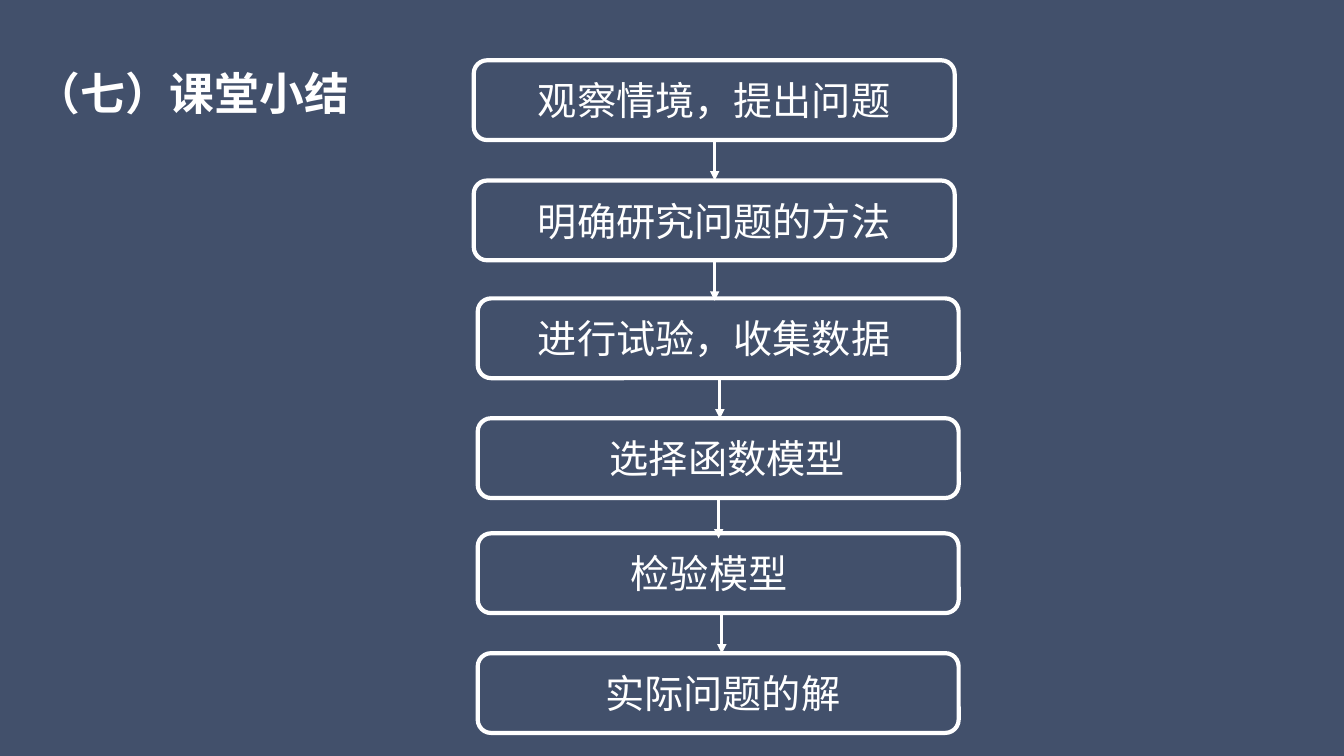
from lxml.etree import SubElement
from pptx import Presentation
from pptx.dml.color import RGBColor
from pptx.enum.shapes import MSO_CONNECTOR, MSO_SHAPE
from pptx.enum.text import MSO_ANCHOR, MSO_AUTO_SIZE, PP_ALIGN
from pptx.oxml.ns import qn
from pptx.util import Cm, Pt

WIDE, HIGH = 12.12, 2.01  # step box, cm
DROP = 1.02  # arrow length, cm

# Text, box left, box top, text indent, arrow x (cm)
STEPS = [
    ("观察情境，提出问题", 11.94, 1.52, 1.52, 18.01),
    ("明确研究问题的方法", 11.94, 4.55, 1.52, 18.01),
    ("进行试验，收集数据", 12.04, 7.52, 1.42, 18.14),
    ("选择函数模型", 12.04, 10.54, 3.23, 18.11),
    ("检验模型", 12.04, 13.44, 3.76, 18.19),
    ("实际问题的解", 12.04, 16.46, 3.12, None),
]


def color(code):
    return RGBColor.from_string(code)


class Board:
    ink, back = "FFFFFF", "42506B"
    font, serif = "Noto Sans CJK SC", "Times New Roman"

    def __init__(self, slide):
        self.slide = slide
        fill = slide.background.fill
        fill.solid()
        fill.fore_color.rgb = color(self.back)

    def label(self, frame, text, size, latin, bold=False):
        frame.text = text
        frame.word_wrap = True
        frame.auto_size = MSO_AUTO_SIZE.NONE
        frame.vertical_anchor = MSO_ANCHOR.MIDDLE
        line = frame.paragraphs[0]
        line.alignment = PP_ALIGN.LEFT
        line.line_spacing = 1.0
        font = line.runs[0].font
        font.size, font.bold, font.name = Pt(size), bold, latin
        font.color.rgb = color(self.ink)
        east = SubElement(line.runs[0]._r.get_or_add_rPr(), qn("a:ea"))
        east.set("typeface", self.font)

    def title(self, text, left, top, width, height):
        head = self.slide.shapes.title
        head.left, head.top = Cm(left), Cm(top)
        head.width, head.height = Cm(width), Cm(height)
        self.label(head.text_frame, text, 32, self.serif, True)

    def box(self, text, left, top, inset):
        box = self.slide.shapes.add_shape(
            MSO_SHAPE.ROUNDED_RECTANGLE, Cm(left), Cm(top), Cm(WIDE), Cm(HIGH))
        box.shadow.inherit = False
        box.fill.background()
        box.line.color.rgb = color(self.ink)
        box.line.width = Pt(3)
        box.text_frame.margin_left = Cm(inset)
        self.label(box.text_frame, text, 28, self.font)

    def arrow(self, x, top):
        link = self.slide.shapes.add_connector(
            MSO_CONNECTOR.STRAIGHT, Cm(x), Cm(top), Cm(x), Cm(top + DROP))
        link.line.color.rgb = color(self.ink)
        link.line.width = Pt(2.25)
        props = link._element.spPr
        SubElement(props.find(qn("a:ln")), qn("a:tailEnd")).set("type", "triangle")
        SubElement(props, qn("a:effectLst"))


def main():
    deck = Presentation()
    deck.slide_width, deck.slide_height = Cm(33.87), Cm(19.05)
    board = Board(deck.slides.add_slide(deck.slide_layouts[5]))

    # Heading
    board.title("（七）课堂小结", 0.64, 1.52, 16.69, 1.63)

    # Flow of steps, each with an arrow to the next
    for text, left, top, inset, x in STEPS:
        board.box(text, left, top, inset)
        if x is not None:
            board.arrow(x, top + HIGH)

    deck.save("out.pptx")


if __name__ == "__main__":
    main()
